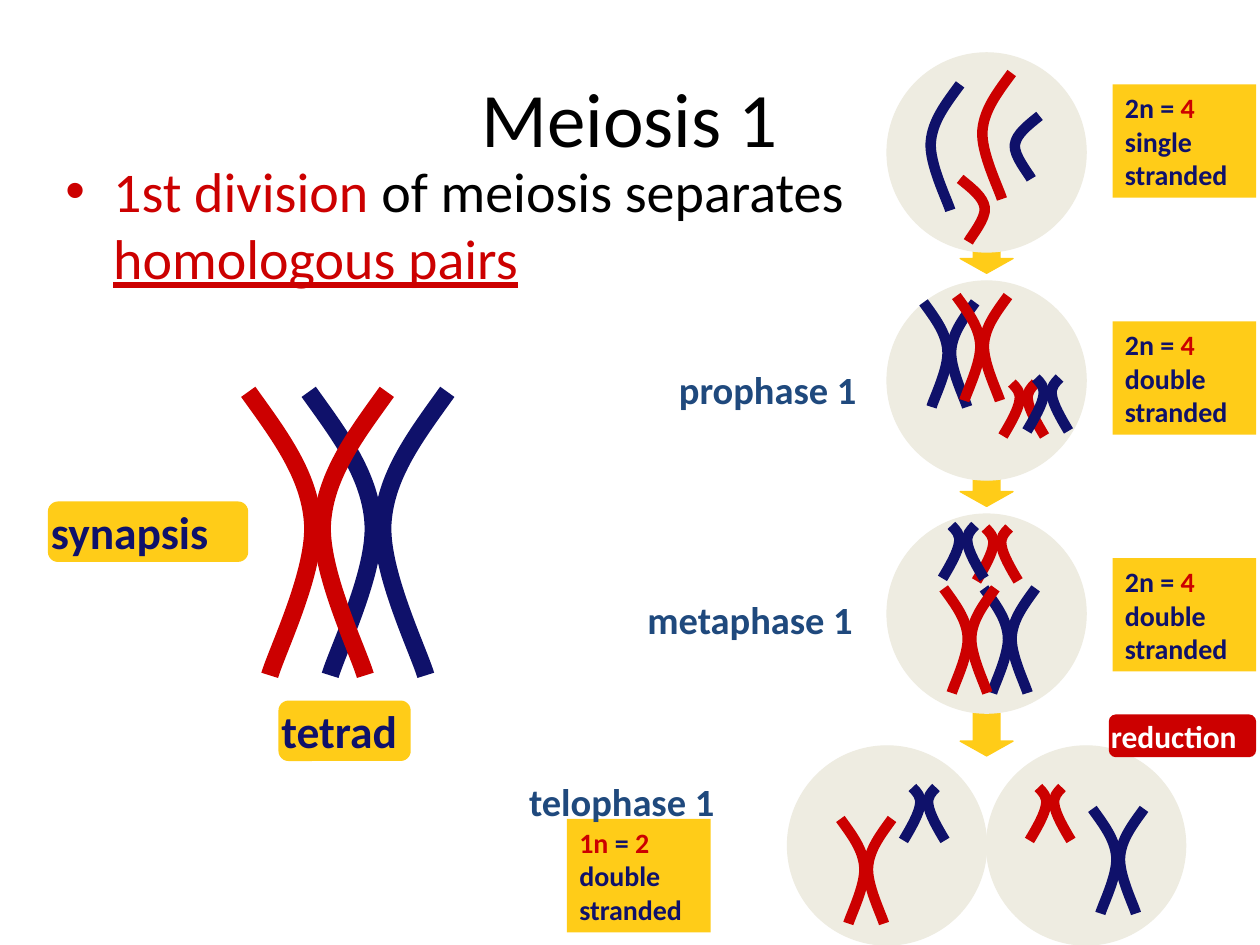
from dataclasses import dataclass

from lxml.etree import SubElement
from pptx import Presentation
from pptx.dml.color import RGBColor
from pptx.enum.shapes import MSO_SHAPE as Preset
from pptx.enum.text import MSO_ANCHOR as Anchor, MSO_AUTO_SIZE as AutoSize, PP_ALIGN as Align
from pptx.oxml.ns import qn
from pptx.util import Inches, Pt


@dataclass(frozen=True)
class Theme:
    font: str = "Calibri"
    navy: str = "0F116A"
    red: str = "CC0000"
    gold: str = "FFCC18"
    cell: str = "EEECE1"
    phase: str = "1F497D"
    black: str = "000000"
    white: str = "FFFFFF"
    title_size: int = 44
    body_size: int = 32
    callout_size: int = 26
    phase_size: int = 22
    reduction_size: int = 18
    count_size: int = 16
    thin: int = 6
    thick: int = 10


THEME = Theme()
LONG_ARM = [(0, 0), (0.44, 0.15), (0.88, 0.29), (0.93, 0.46), (0.98, 0.63), (0.42, 0.91), (0.31, 1)]
SHORT_ARM = [(0, 1), (0.37, 0.76), (0.74, 0.5), (0.8, 0.33), (0.87, 0.17), (0.65, 0.09), (0.43, 0)]
LONG_SIZE = (0.41, 0.83)
SHORT_SIZE = (0.33, 0.42)
CELL_SIZE = 1.58
CELL_LEFT = 7.04


def apply(target, values):
    for key, value in values.items():
        setattr(target, key, value)


def write(frame, lines, size, bold=False, align=Align.LEFT):
    for index, line in enumerate(lines):
        paragraph = frame.paragraphs[0] if index == 0 else frame.add_paragraph()
        paragraph.alignment = align
        for words, colour, *underline in line:
            run = paragraph.add_run()
            run.text = words
            apply(run.font, {"name": THEME.font, "size": Pt(size), "bold": bold,
                             "underline": bool(underline)})
            run.font.color.rgb = RGBColor.from_string(colour)


def add_text(slide, box, lines, size, bold=False, align=Align.LEFT, **frame_format):
    frame = slide.shapes.add_textbox(*map(Inches, box)).text_frame
    apply(frame, {"word_wrap": True, "vertical_anchor": Anchor.MIDDLE} | frame_format)
    write(frame, lines, size, bold, align)
    return frame


def add_solid(slide, preset, box, fill, outlined=False):
    solid = slide.shapes.add_shape(preset, *map(Inches, box))
    solid.shadow.inherit = False
    solid.fill.solid()
    solid.fill.fore_color.rgb = RGBColor.from_string(fill)
    if outlined:
        solid.line.color.rgb = RGBColor.from_string(fill)
        solid.line.width = Pt(0.75)
    else:
        solid.line.fill.background()
    return solid


def add_tag(slide, preset, box, lines, size, fill=THEME.gold, inset=None):
    frame = add_solid(slide, preset, box, fill).text_frame
    apply(frame, {"word_wrap": False, "auto_size": AutoSize.SHAPE_TO_FIT_TEXT,
                  "vertical_anchor": Anchor.MIDDLE})
    if inset is not None:
        apply(frame, {f"margin_{side}": Inches(inset) for side in ("left", "top", "right", "bottom")})
    write(frame, lines, size, bold=True)


def add_callout(slide, box, words, size, colour=THEME.navy, fill=THEME.gold):
    add_tag(slide, Preset.ROUNDED_RECTANGLE, box, [[(words, colour)]], size, fill, inset=0)


def add_count(slide, left, top, count, strands):
    lines = [count, [(strands, THEME.navy)], [("stranded", THEME.navy)]]
    add_tag(slide, Preset.RECTANGLE, (left, top, 1.14, 0.9), lines, THEME.count_size)


def add_phase(slide, left, top, width, words):
    add_text(slide, (left, top, width, 0.47), [[(words, THEME.phase)]], THEME.phase_size,
             bold=True, word_wrap=False, auto_size=AutoSize.SHAPE_TO_FIT_TEXT)


def add_cell(slide, left, top):
    add_solid(slide, Preset.OVAL, (left, top, CELL_SIZE, CELL_SIZE), THEME.cell, outlined=True)


def add_arrow(slide, top):
    arrow = add_solid(slide, Preset.RIGHT_ARROW, (7.6, top, 0.46, 0.42), THEME.gold, outlined=True)
    arrow.rotation = 90
    arrow.adjustments[1] = 0.28


def add_strand(slide, x, y, reach, height, colour, arm=LONG_ARM, weight=THEME.thin):
    start, *bends = [(Inches(x + u * reach), Inches(y + v * height)) for u, v in arm]
    builder = slide.shapes.build_freeform(*start)
    builder.add_line_segments(bends, close=False)
    strand = builder.convert_to_shape()
    outline = next(strand.element.iter(qn("a:path")))
    for index, segment in enumerate(outline.findall(qn("a:lnTo"))):
        if index % 3 == 0:
            curve = SubElement(outline, qn("a:cubicBezTo"))
        curve.append(segment[0])
        outline.remove(segment)
    strand.shadow.inherit = False
    strand.fill.background()
    strand.line.color.rgb = RGBColor.from_string(colour)
    strand.line.width = Pt(weight)


def add_chromosome(slide, left, top, colour, size=LONG_SIZE, arm=LONG_ARM, weight=THEME.thin):
    width, height = size
    add_strand(slide, left, top, width / 2, height, colour, arm, weight)
    add_strand(slide, left + width, top, -width / 2, height, colour, arm, weight)


def add_short(slide, left, top, colour):
    add_chromosome(slide, left, top, colour, SHORT_SIZE, SHORT_ARM)


def add_heading(slide):
    add_text(slide, (0.5, 0.3, 9, 1.25), [[("Meiosis 1", THEME.black)]], THEME.title_size,
             align=Align.CENTER)
    statement = [("1st division", THEME.red), (" of meiosis separates ", THEME.black),
                 ("homologous pairs", THEME.red, True)]
    body = add_text(slide, (0.42, 1.19, 6.32, 1.43), [statement], THEME.body_size,
                    vertical_anchor=Anchor.TOP, margin_right=0)
    paragraph = body.paragraphs[0]
    paragraph.space_before = Pt(THEME.body_size * 0.2)
    bullet = paragraph._p.get_or_add_pPr()
    bullet.set("marL", str(Inches(0.38)))
    bullet.set("indent", str(Inches(-0.38)))
    SubElement(bullet, qn("a:buFont")).set("typeface", "Arial")
    SubElement(bullet, qn("a:buChar")).set("char", "•")


def add_tetrad(slide):
    for left, colour in ((2.45, THEME.navy), (1.97, THEME.red)):
        add_chromosome(slide, left, 3.11, colour, (1.1, 2.25), weight=THEME.thick)
    add_callout(slide, (2.21, 5.56, 1.05, 0.48), "tetrad", THEME.callout_size)
    add_callout(slide, (0.38, 3.98, 1.59, 0.48), "synapsis", THEME.callout_size)


def add_stages(slide):
    diploid = [("2n = ", THEME.navy), ("4", THEME.red)]
    for cell_top, arrow_top, count_top, strands in (
            (0.42, 1.73, 0.67, "single"), (2.23, 3.58, 2.55, "double"), (4.08, 5.56, 4.43, "double")):
        add_arrow(slide, arrow_top)
        add_cell(slide, CELL_LEFT, cell_top)
        add_count(slide, 8.83, count_top, diploid, strands)
    for x, y, reach, height, colour in (
            (7.62, 0.67, -0.25, 1, THEME.navy), (8.03, 0.58, -0.25, 1, THEME.red),
            (7.62, 1.42, 0.21, 0.5, THEME.red), (8.25, 0.92, -0.21, 0.5, THEME.navy)):
        add_strand(slide, x, y, reach, height, colour)
    for half in (-1, 1):
        add_cell(slide, CELL_LEFT + half * CELL_SIZE / 2, 5.92)
    for add_pair, left, top, colour in (
            (add_short, 7.96, 3.04, THEME.red), (add_chromosome, 7.33, 2.4, THEME.navy),
            (add_short, 8.15, 3, THEME.navy), (add_chromosome, 7.59, 2.35, THEME.red),
            (add_short, 7.75, 4.19, THEME.red), (add_chromosome, 7.81, 4.67, THEME.navy),
            (add_short, 7.48, 4.17, THEME.navy), (add_chromosome, 7.49, 4.67, THEME.red),
            (add_short, 8.17, 6.25, THEME.red), (add_chromosome, 8.67, 6.42, THEME.navy),
            (add_short, 7.17, 6.25, THEME.navy), (add_chromosome, 6.67, 6.5, THEME.red)):
        add_pair(slide, left, top, colour)
    haploid = [("1n", THEME.red), (" = ", THEME.navy), ("2", THEME.red)]
    add_count(slide, 4.5, 6.5, haploid, "double")
    for left, top, width, words in ((5.29, 2.85, 1.83, "prophase 1"), (5.04, 4.68, 2.05, "metaphase 1"),
                                    (4.1, 6.12, 1.88, "telophase 1")):
        add_phase(slide, left, top, width, words)
    add_callout(slide, (8.8, 5.67, 1.17, 0.34), "reduction", THEME.reduction_size,
                THEME.white, THEME.red)


def main():
    deck = Presentation()
    apply(deck, {"slide_width": Inches(10), "slide_height": Inches(7.5)})
    slide = deck.slides.add_slide(deck.slide_layouts[6])
    add_heading(slide)
    add_tetrad(slide)
    add_stages(slide)
    deck.save("out.pptx")


if __name__ == "__main__":
    main()
